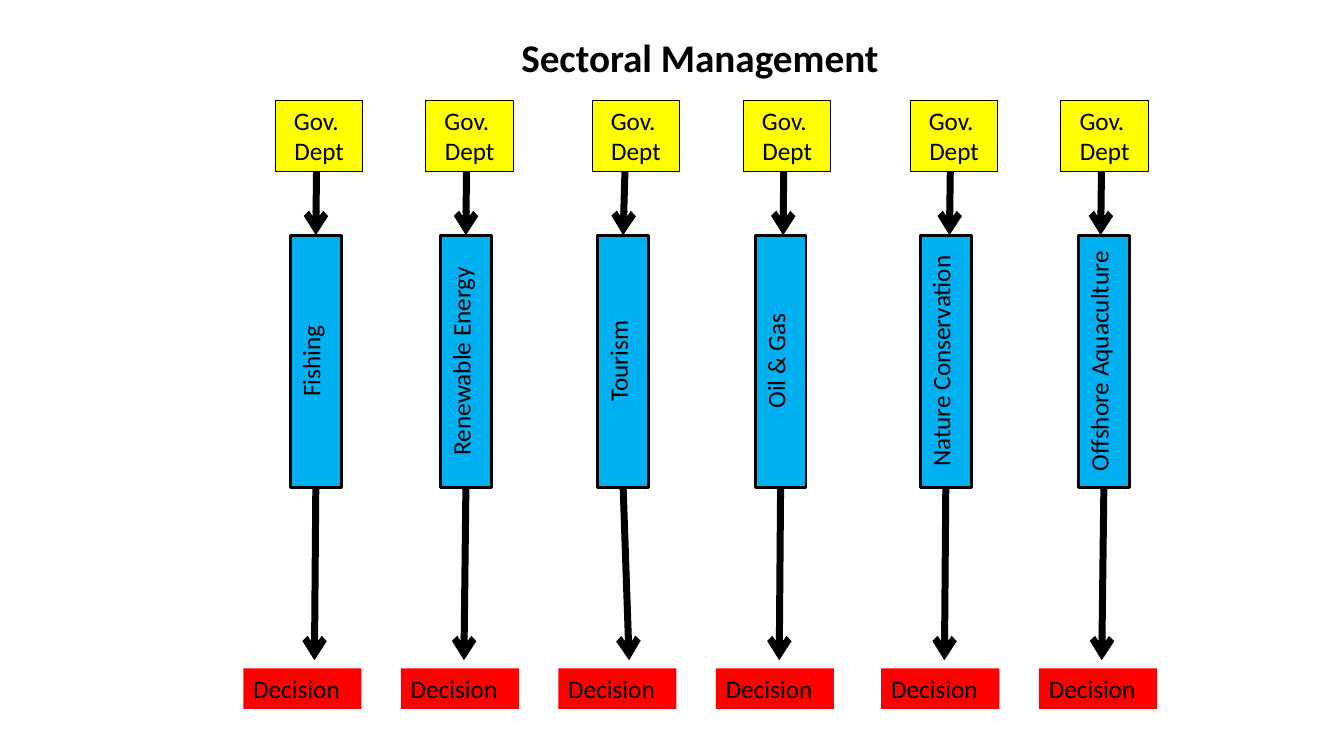
from dataclasses import dataclass
from typing import Optional

from lxml.etree import SubElement
from pptx import Presentation
from pptx.dml.color import RGBColor
from pptx.enum.shapes import MSO_CONNECTOR as Link, MSO_SHAPE as Form
from pptx.enum.text import MSO_ANCHOR as Anchor, PP_ALIGN as Align
from pptx.oxml.ns import qn
from pptx.shapes.autoshape import Shape
from pptx.shapes.shapetree import SlideShapes
from pptx.text.text import TextFrame
from pptx.util import Pt


@dataclass(frozen=True)
class Style:
    top: float
    width: float
    height: float
    fill: str
    edge: float
    align: Align
    vert: Optional[str] = None


@dataclass(frozen=True)
class Sector:
    name: str
    dept: float
    bar: float
    verdict: float
    start: float
    entry: float
    tip: float


DEPT = Style(71.5, 62.6, 51, "FFFF00", 0.75, Align.CENTER)
BAR = Style(168, 36.4, 180, "00B0F0", 2, Align.CENTER, "vert270")
VERDICT = Style(477.4, 84.4, 29, "FF0000", 0, Align.LEFT)
TIP_Y = 471.6
SNAP = 1.0

SECTORS = [
    Sector("Fishing", 196.7, 207.4, 173.8, 226.1, 225.9, 224.6),
    Sector("Renewable Energy", 304.2, 314.6, 286.3, 333.2, 332.8, 331.4),
    Sector("Tourism", 423, 426.9, 398.8, 446.4, 445.7, 449.4),
    Sector("Oil & Gas", 531, 539.4, 511.3, 559.8, 559.4, 556.6),
    Sector("Nature Conservation", 650.2, 657.4, 629.4, 678.8, 678.2, 674.6),
    Sector("Offshore Aquaculture", 757.8, 770.3, 742.1, 786.8, 786.2, 787),
]


def paint(code: str) -> RGBColor:
    return RGBColor.from_string(code)


def write(frame: TextFrame, text: str, size: float, align: Align,
          bold: bool = False) -> None:
    frame.word_wrap = True
    frame.vertical_anchor = Anchor.TOP
    frame.text = text
    for para in frame.paragraphs:
        para.alignment = align
        para.font.name = "Calibri"
        para.font.size = Pt(size)
        para.font.bold = bold
        para.font.color.rgb = paint("000000")


def add_box(shapes: SlideShapes, style: Style, left: float, text: str) -> Shape:
    box = shapes.add_shape(Form.RECTANGLE, Pt(left), Pt(style.top),
                           Pt(style.width), Pt(style.height))
    box.shadow.inherit = False
    box.fill.solid()
    box.fill.fore_color.rgb = paint(style.fill)
    if style.edge:
        box.line.color.rgb = paint("000000")
        box.line.width = Pt(style.edge)
    else:
        box.line.fill.background()
    write(box.text_frame, text, 18, style.align)
    if style.vert:
        box.element.txBody.bodyPr.set("vert", style.vert)
    return box


def add_arrow(shapes: SlideShapes, x1: float, y1: float, x2: float, y2: float,
              source: Optional[Shape] = None,
              target: Optional[Shape] = None) -> None:
    arrow = shapes.add_connector(Link.STRAIGHT, Pt(x1), Pt(y1), Pt(x2), Pt(y2))
    arrow.line.color.rgb = paint("000000")
    arrow.line.width = Pt(5)
    props = arrow.element.spPr
    SubElement(props.find(qn("a:ln")), qn("a:tailEnd"), type="arrow")
    SubElement(props, qn("a:effectLst"))
    if source is not None:
        arrow.begin_connect(source, 2)
    if target is not None:
        arrow.end_connect(target, 0)


def add_sector(shapes: SlideShapes, item: Sector) -> None:
    add_box(shapes, DEPT, item.dept, "Gov. \nDept")
    bar = add_box(shapes, BAR, item.bar, item.name)
    add_box(shapes, VERDICT, item.verdict, "Decision")
    mid = item.bar + BAR.width / 2
    target = bar if abs(item.entry - mid) < SNAP else None
    add_arrow(shapes, item.start, DEPT.top + DEPT.height,
              item.entry, BAR.top, target=target)
    add_arrow(shapes, mid, BAR.top + BAR.height, item.tip, TIP_Y, source=bar)


def main() -> None:
    deck = Presentation()
    deck.slide_width, deck.slide_height = Pt(960), Pt(540)
    shapes = deck.slides.add_slide(deck.slide_layouts[6]).shapes
    for item in SECTORS:
        add_sector(shapes, item)
    title = shapes.add_textbox(Pt(196.7), Pt(20.2), Pt(612.7), Pt(41.2))
    write(title.text_frame, "Sectoral Management ", 28, Align.CENTER, True)
    deck.save("out.pptx")


if __name__ == "__main__":
    main()
